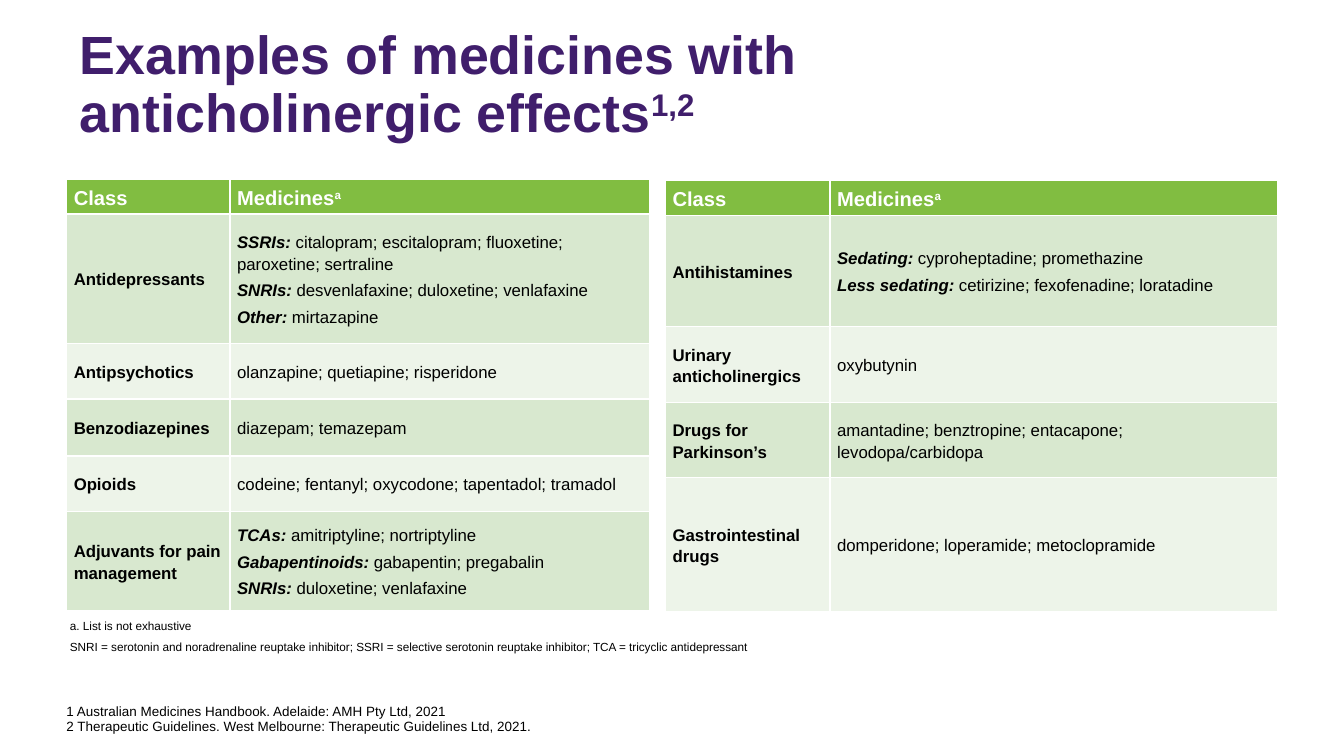
import pptx
import pptx.dml.color
import pptx.enum.text
import pptx.oxml
import pptx.util
from pptx.util import Inches, Pt

COLOURS = {
    "title": "401E6C", "text": "000000", "header_text": "FFFFFF",
    "header": "81BD41", "odd": "D8E8CF", "even": "EDF4E9", "border": "FFFFFF",
}
FONT = "Arial"

# Content: a line is a list of (text, style) runs
TITLE = ["Examples of medicines with ", "anticholinergic effects"]
TITLE_CITATION = "1,2"
HEADER = ("Class", "Medicines", "a")
TABLES = [
    {
        "left": 0.55, "top": 1.48, "columns": [1.35, 3.47],
        "rows": [0.29, 1.07, 0.46, 0.47, 0.46, 0.82],
        "classes": [
            ("Antidepressants", [
                ("SSRIs:", " citalopram; escitalopram; fluoxetine; paroxetine; sertraline"),
                ("SNRIs:", " desvenlafaxine; duloxetine; venlafaxine"),
                ("Other:", " mirtazapine")]),
            ("Antipsychotics", [("", "olanzapine; quetiapine; risperidone")]),
            ("Benzodiazepines", [("", "diazepam; temazepam")]),
            ("Opioids", [("", "codeine; fentanyl; oxycodone; tapentadol; tramadol")]),
            ("Adjuvants for pain management", [
                ("TCAs:", " amitriptyline; nortriptyline"),
                ("Gabapentinoids: ", "gabapentin; pregabalin"),
                ("SNRIs:", " duloxetine; venlafaxine")]),
        ],
    },
    {
        "left": 5.5, "top": 1.49, "columns": [1.36, 3.7],
        "rows": [0.29, 0.92, 0.63, 0.62, 1.11],
        "classes": [
            ("Antihistamines", [
                ("Sedating: ", "cyproheptadine; promethazine"),
                ("Less sedating: ", "cetirizine; fexofenadine; loratadine")]),
            ("Urinary anticholinergics", [("", "oxybutynin")]),
            ("Drugs for Parkinson’s", [
                ("", "amantadine; benztropine; entacapone; levodopa/carbidopa")]),
            ("Gastrointestinal drugs", [("", "domperidone; loperamide; metoclopramide")]),
        ],
    },
]
FOOTNOTES = [
    "a. List is not exhaustive",
    "SNRI = serotonin and noradrenaline reuptake inhibitor; SSRI = selective "
    "serotonin reuptake inhibitor; TCA = tricyclic antidepressant",
]
REFERENCES = [
    "1 Australian Medicines Handbook. Adelaide: AMH Pty Ltd, 2021",
    "2 Therapeutic Guidelines. West Melbourne: Therapeutic Guidelines Ltd, 2021.",
]


def rgb(name):
    return pptx.dml.color.RGBColor.from_string(COLOURS[name])


def add_run(paragraph, text, style=""):
    run = paragraph.add_run()
    run.text = text
    if style == "label":
        run.font.bold = run.font.italic = True
    elif style == "superscript":
        run._r.get_or_add_rPr().set("baseline", "30000")


def write(frame, lines, size, colour="text", bold=False, spacing=1.15, before=3):
    for index, line in enumerate(lines):
        paragraph = frame.add_paragraph() if index else frame.paragraphs[0]
        paragraph.line_spacing = spacing
        paragraph.space_before = Pt(before if index else 0)
        paragraph.font.name = FONT
        paragraph.font.size = Pt(size)
        paragraph.font.bold = bold
        paragraph.font.color.rgb = rgb(colour)
        for text, style in line:
            add_run(paragraph, text, style)


def fill_cell(cell, lines, fill, **text_format):
    cell.margin_left = cell.margin_right = Inches(0.06)
    cell.margin_top = cell.margin_bottom = 0
    cell.vertical_anchor = pptx.enum.text.MSO_ANCHOR.MIDDLE
    properties = cell._tc.get_or_add_tcPr()
    for side in ("lnL", "lnR", "lnT", "lnB"):
        properties.append(pptx.oxml.parse_xml(
            f'<a:{side} xmlns:a="http://schemas.openxmlformats.org/drawingml/2006/main" '
            f'w="12700"><a:solidFill><a:srgbClr val="{COLOURS["border"]}"/>'
            f'</a:solidFill></a:{side}>'))
    cell.fill.solid()
    cell.fill.fore_color.rgb = rgb(fill)
    write(cell.text_frame, lines, **text_format)


def add_medicine_table(slide, content):
    columns, rows = content["columns"], content["rows"]
    table = slide.shapes.add_table(
        len(rows), len(columns), Inches(content["left"]), Inches(content["top"]),
        Inches(sum(columns)), Inches(sum(rows))).table
    for column, width in zip(table.columns, columns):
        column.width = Inches(width)
    for row, height in zip(table.rows, rows):
        row.height = Inches(height)

    class_heading, medicines_heading, note = HEADER
    headings = [[(class_heading, "")], [(medicines_heading, ""), (note, "superscript")]]
    for index, heading in enumerate(headings):
        fill_cell(table.cell(0, index), [heading], "header",
                  size=12, colour="header_text", bold=True)

    for index, (name, medicines) in enumerate(content["classes"], start=1):
        fill = "odd" if index % 2 else "even"
        fill_cell(table.cell(index, 0), [[(name, "")]], fill, size=10, bold=True)
        lines = [[(text, style) for text, style in ((label, "label"), (names, "")) if text]
                 for label, names in medicines]
        fill_cell(table.cell(index, 1), lines, fill, size=10)


def add_notes(slide, left, top, width, height, lines, **text_format):
    frame = slide.shapes.add_textbox(
        Inches(left), Inches(top), Inches(width), Inches(height)).text_frame
    frame.word_wrap = True
    write(frame, [[(line, "")] for line in lines], **text_format)
    return frame


def main():
    presentation = pptx.Presentation()
    presentation.slide_width, presentation.slide_height = Inches(11.11), Inches(6.25)
    slide = presentation.slides.add_slide(presentation.slide_layouts[5])

    # Title
    title = slide.shapes.title
    title.left, title.top = Inches(0.56), Inches(0.25)
    title.width, title.height = Inches(8.82), Inches(0.99)
    frame = title.text_frame
    frame.auto_size = pptx.enum.text.MSO_AUTO_SIZE.NONE
    frame.vertical_anchor = pptx.enum.text.MSO_ANCHOR.BOTTOM
    write(frame, [[(TITLE[0], "")]], 32, "title", bold=True, spacing=0.9)
    paragraph = frame.paragraphs[0]
    paragraph.alignment = pptx.enum.text.PP_ALIGN.LEFT
    paragraph.add_line_break()
    add_run(paragraph, TITLE[1])
    add_run(paragraph, TITLE_CITATION, "superscript")

    # Medicine tables
    for content in TABLES:
        add_medicine_table(slide, content)

    # Footnotes and references
    add_notes(slide, 0.48, 5.05, 10.02, 0.4, FOOTNOTES, size=7)
    references = add_notes(slide, 0.55, 5.59, 7.97, 0.48, REFERENCES,
                           size=8, spacing=0.9, before=0)
    references.margin_left = references.margin_right = 0
    references.margin_top = references.margin_bottom = 0
    references.vertical_anchor = pptx.enum.text.MSO_ANCHOR.BOTTOM

    presentation.save("out.pptx")


if __name__ == "__main__":
    main()
